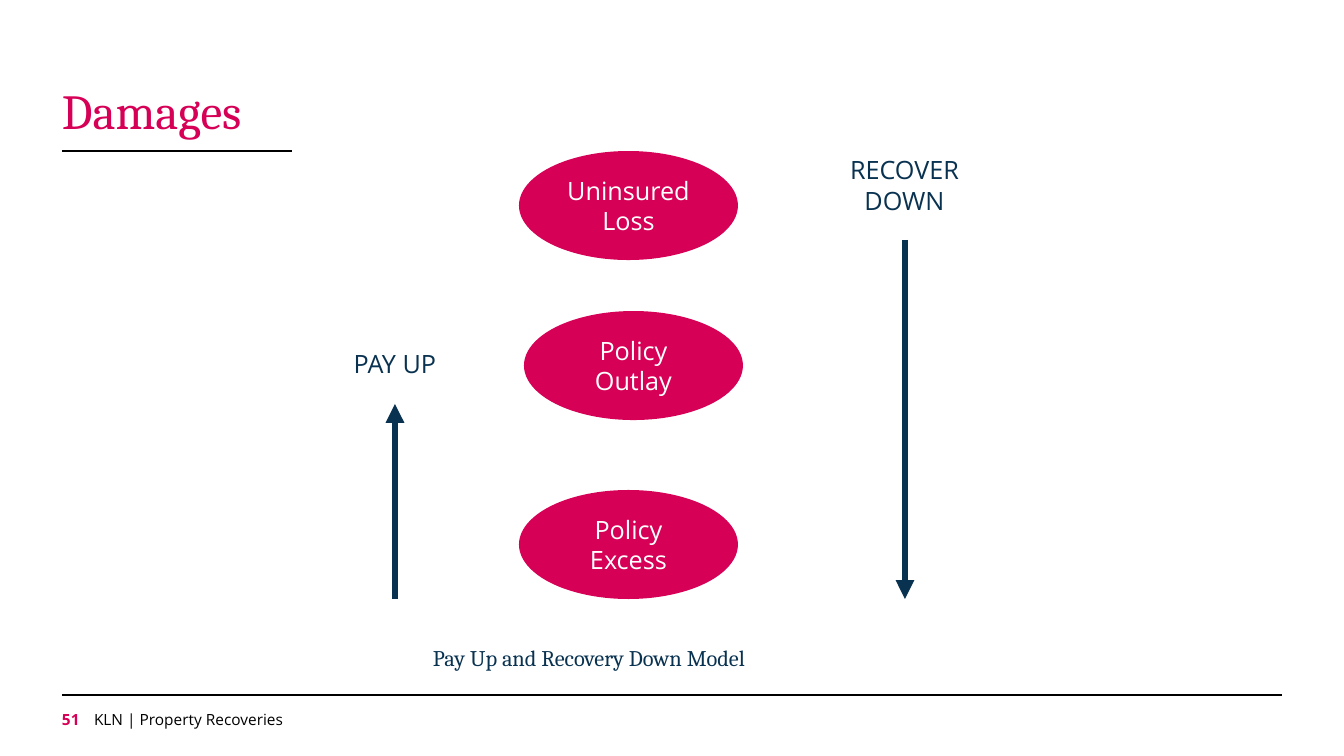
from lxml import etree
from pptx import Presentation
from pptx.dml.color import RGBColor
from pptx.enum.shapes import MSO_CONNECTOR, MSO_SHAPE
from pptx.enum.text import MSO_ANCHOR, PP_ALIGN
from pptx.oxml.ns import qn
from pptx.util import Emu, Pt

STRAIGHT = MSO_CONNECTOR.STRAIGHT
OVAL = MSO_SHAPE.OVAL
MIDDLE, TOP = MSO_ANCHOR.MIDDLE, MSO_ANCHOR.TOP
CENTER, LEFT = PP_ALIGN.CENTER, PP_ALIGN.LEFT

PINK = RGBColor(0xD6, 0x00, 0x56)
NAVY = RGBColor(0x09, 0x32, 0x50)
BLACK = RGBColor(0x00, 0x00, 0x00)
WHITE = RGBColor(0xFF, 0xFF, 0xFF)
SERIF, SANS = "Cambria", "Open Sans"

PX_PER_INCH = 100.8
MARGIN = 62
OVAL_WIDTH, OVAL_HEIGHT = 219, 109
ARROW_BASE = 599


def px(length):
    """Turn a length in px into EMU."""
    return Emu(round(length * 914400 / PX_PER_INCH))


def write(box, text, size, font, color, align=LEFT, bold=False):
    """Write one formatted paragraph into a shape."""
    box.text_frame.word_wrap = True
    para = box.text_frame.paragraphs[0]
    para.alignment = align
    span = para.add_run()
    span.text = text
    span.font.size = Pt(size)
    span.font.name = font
    span.font.bold = bold
    span.font.color.rgb = color


def add_line_of_text(page, bounds, text, size, font, color, bold=False):
    """Add a left-aligned text box without insets."""
    box = page.shapes.add_textbox(*map(px, bounds))
    frame = box.text_frame
    frame.margin_left = frame.margin_right = 0
    frame.margin_top = frame.margin_bottom = 0
    frame.vertical_anchor = TOP
    write(box, text, size, font, color, bold=bold)


def add_arrow_label(page, bounds, text):
    """Add a centred label above an arrow."""
    box = page.shapes.add_textbox(*map(px, bounds))
    box.text_frame.vertical_anchor = MIDDLE
    write(box, text, 18, SANS, NAVY, CENTER)


def add_loss_oval(page, left, top, text):
    """Add a pink oval naming one layer of loss."""
    oval = page.shapes.add_shape(
        OVAL, px(left), px(top), px(OVAL_WIDTH), px(OVAL_HEIGHT))
    oval.shadow.inherit = False
    oval.fill.solid()
    oval.fill.fore_color.rgb = PINK
    oval.line.fill.background()
    oval.text_frame.vertical_anchor = MIDDLE
    write(oval, text, 18, SANS, WHITE, CENTER)


def add_line(page, start, end, color, width):
    """Add a straight line without shadow."""
    line = page.shapes.add_connector(STRAIGHT, *map(px, start + end))
    line.line.color.rgb = color
    line.line.width = Pt(width)
    etree.SubElement(line._element.spPr, qn("a:effectLst"))
    return line


def add_arrow(page, x, start, end):
    """Add a thick vertical arrow pointing at its end."""
    arrow = add_line(page, (x, start), (x, end), NAVY, 4.5)
    outline = arrow.line._get_or_add_ln()
    etree.SubElement(outline, qn("a:tailEnd"), type="triangle")


def main():
    """Build the damages slide and save it."""
    deck = Presentation()
    deck.slide_width, deck.slide_height = px(1344), px(756)
    page = deck.slides.add_slide(deck.slide_layouts[6])

    add_line(page, (MARGIN, 695), (1282, 695), BLACK, 1)
    add_line(page, (MARGIN, 151), (292, 151), BLACK, 1.5)
    add_line_of_text(page, (MARGIN, 80, 1220, 59), "Damages", 35, SERIF, PINK)
    add_line_of_text(page, (94, 710, 570, 19),
                     "KLN | Property Recoveries", 11, SANS, BLACK)
    add_line_of_text(page, (MARGIN, 710, 31, 19), "51", 11, SANS, PINK, True)
    add_line_of_text(page, (433, 644, 381, 27),
                     "Pay Up and Recovery Down Model", 16, SERIF, NAVY)

    for left, top, text in ((519, 151, "Uninsured Loss"),
                            (524, 311, "Policy Outlay"),
                            (519, 490, "Policy Excess")):
        add_loss_oval(page, left, top, text)

    add_arrow_label(page, (335, 329, 120, 68), "PAY UP")
    add_arrow_label(page, (837, 151, 135, 68), "RECOVER DOWN")
    add_arrow(page, 905, 240, ARROW_BASE)
    add_arrow(page, 395, ARROW_BASE, 404)

    deck.save("out.pptx")


if __name__ == "__main__":
    main()
